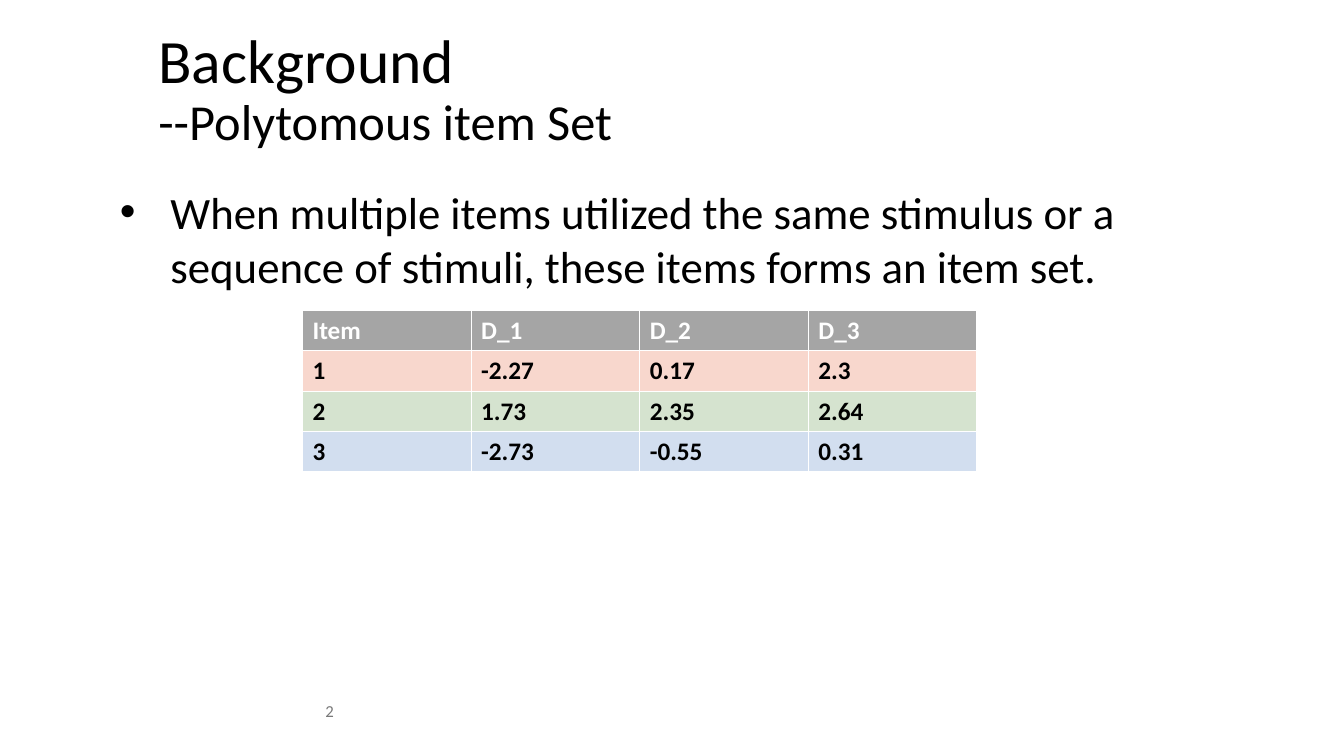
from dataclasses import dataclass

from lxml.etree import SubElement
from pptx import Presentation
from pptx.dml.color import RGBColor
from pptx.enum.text import MSO_ANCHOR, MSO_AUTO_SIZE, PP_ALIGN
from pptx.oxml.ns import qn
from pptx.slide import Slide
from pptx.text.text import Font
from pptx.util import Inches, Pt


@dataclass(frozen=True)
class Theme:
    font: str = "Calibri"
    ink: str = "000000"
    white: str = "FFFFFF"
    muted: str = "797979"
    header: str = "A5A5A5"
    title: int = 44
    subtitle: int = 36
    body: int = 32
    table: int = 18
    number: int = 12


@dataclass(frozen=True)
class Area:
    left: float
    top: float
    width: float
    height: float

    def lengths(self) -> list[Inches]:
        return [Inches(side) for side in (self.left, self.top, self.width, self.height)]


@dataclass(frozen=True)
class TableRow:
    values: tuple[str, ...]
    fill: str
    ink: str


THEME = Theme()
ITEM_ROWS = [
    TableRow(("Item", "D_1", "D_2", "D_3"), THEME.header, THEME.white),
    TableRow(("1", "-2.27", "0.17", "2.3"), "F8D7CD", THEME.ink),
    TableRow(("2", "1.73", "2.35", "2.64"), "D5E3CF", THEME.ink),
    TableRow(("3", "-2.73", "-0.55", "0.31"), "D2DEEF", THEME.ink),
]


def style(font: Font, size: int, color: str = THEME.ink, bold: bool = False) -> None:
    font.name = THEME.font
    font.size = Pt(size)
    font.bold = bold
    font.color.rgb = RGBColor.from_string(color)


def place(box, area: Area) -> None:
    box.left, box.top, box.width, box.height = area.lengths()


def fill_title(page: Slide, area: Area) -> None:
    box = page.shapes.title
    place(box, area)
    frame = box.text_frame
    frame.text = "Background\v--Polytomous item Set"
    frame.vertical_anchor = MSO_ANCHOR.TOP
    frame.auto_size = MSO_AUTO_SIZE.NONE
    para = frame.paragraphs[0]
    para.alignment = PP_ALIGN.LEFT
    para.line_spacing = 0.9
    for span, size in zip(para.runs, (THEME.title, THEME.subtitle)):
        style(span.font, size)


def fill_body(page: Slide, area: Area) -> None:
    box = page.placeholders[1]
    place(box, area)
    frame = box.text_frame
    frame.text = (
        "When multiple items utilized the same stimulus or a sequence of stimuli, "
        "these items forms an item set."
    )
    frame.auto_size = MSO_AUTO_SIZE.SHAPE_TO_FIT_TEXT
    para = frame.paragraphs[0]
    para.space_before = Pt(0)
    properties = para._p.get_or_add_pPr()
    properties.set("marL", str(Inches(0.5)))
    properties.set("indent", str(Inches(-0.5)))
    SubElement(properties, qn("a:buFont"), typeface="Arial")
    SubElement(properties, qn("a:buChar"), char="•")
    style(para.runs[0].font, THEME.body)


def add_page_number(page: Slide, area: Area) -> None:
    frame = page.shapes.add_textbox(*area.lengths()).text_frame
    frame.word_wrap = True
    frame.vertical_anchor = MSO_ANCHOR.MIDDLE
    frame.text = "2"
    para = frame.paragraphs[0]
    para.alignment = PP_ALIGN.RIGHT
    style(para.runs[0].font, THEME.number, THEME.muted)


def add_item_table(page: Slide, area: Area) -> None:
    columns = len(ITEM_ROWS[0].values)
    table = page.shapes.add_table(len(ITEM_ROWS), columns, *area.lengths()).table
    table.horz_banding = False
    for row_index, row in enumerate(ITEM_ROWS):
        for column_index, value in enumerate(row.values):
            cell = table.cell(row_index, column_index)
            cell.text_frame.text = value
            cell.fill.solid()
            cell.fill.fore_color.rgb = RGBColor.from_string(row.fill)
            style(cell.text_frame.paragraphs[0].runs[0].font, THEME.table, row.ink, True)


def main() -> None:
    deck = Presentation()
    deck.slide_width = Inches(13.33)
    deck.slide_height = Inches(7.5)
    page = deck.slides.add_slide(deck.slide_layouts[1])
    fill_title(page, Area(1.47, 0.25, 11.14, 1.13))
    fill_body(page, Area(1.09, 1.78, 11.59, 1.18))
    add_page_number(page, Area(0.41, 6.85, 3, 0.4))
    add_item_table(page, Area(3, 3.08, 6.69, 1.6))
    deck.save("out.pptx")


if __name__ == "__main__":
    main()
